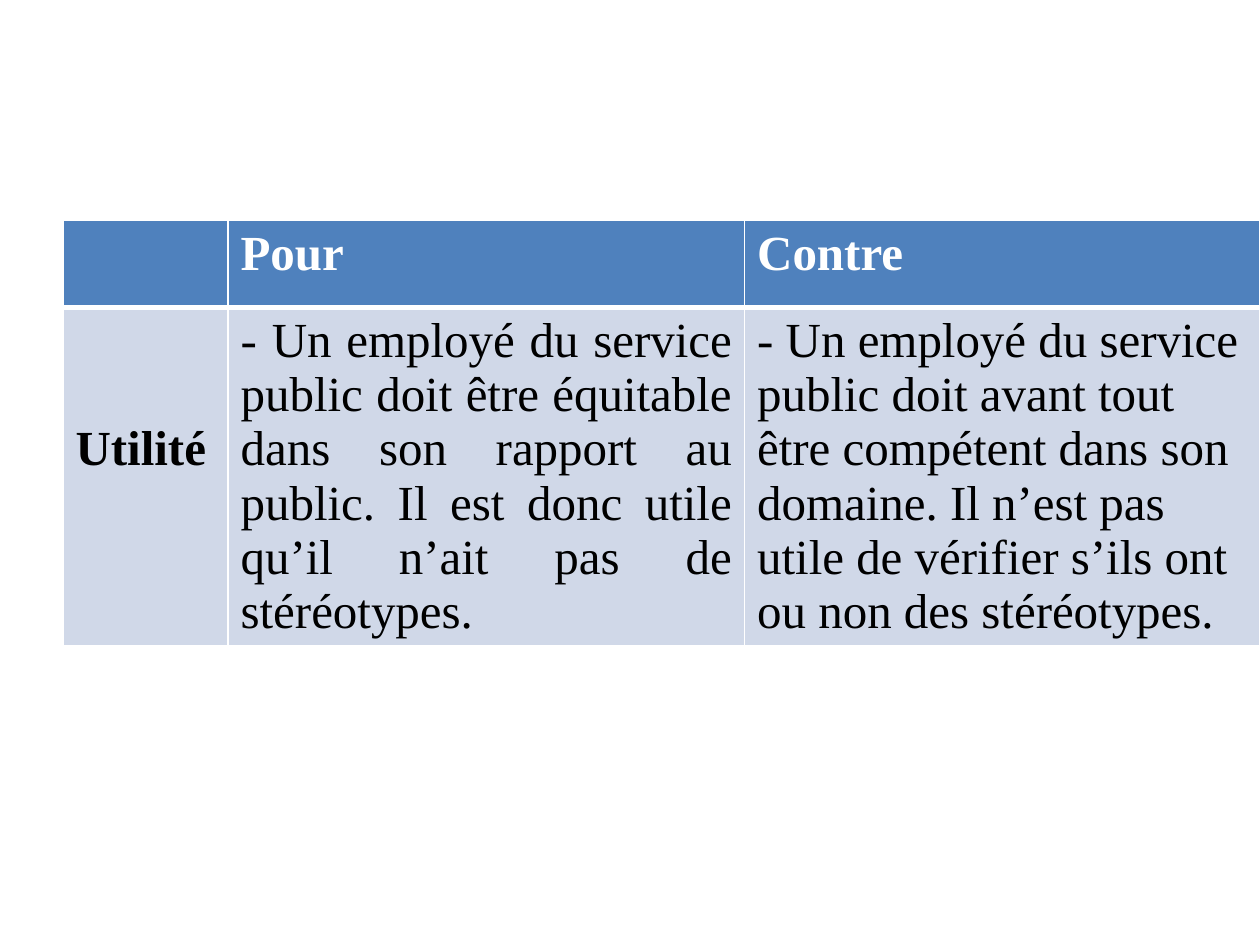
from lxml.etree import SubElement
from pptx import Presentation
from pptx.dml.color import RGBColor
from pptx.enum.text import PP_ALIGN
from pptx.oxml.ns import qn
from pptx.util import Inches, Pt

COLORS = {"header": "4F81BD", "body": "D0D8E8", "rule": "FFFFFF",
          "header_text": "FFFFFF", "body_text": "000000"}


def write_text(frame, text, color, size=28, bold=False, align=PP_ALIGN.LEFT,
               font="Times New Roman"):
    paragraph = frame.paragraphs[0]
    paragraph.alignment = align
    run = paragraph.add_run()
    run.text = text
    run.font.name = font
    run.font.size = Pt(size)
    run.font.bold = bold
    run.font.color.rgb = RGBColor.from_string(COLORS[color])


class ArgumentSlide:
    def __init__(self, presentation, rule=1, header_rule=3):
        self.slide = presentation.slides.add_slide(presentation.slide_layouts[6])
        self.rule = rule
        self.header_rule = header_rule

    def table(self, left, top, widths, heights):
        table = self.slide.shapes.add_table(
            len(heights), len(widths), Inches(left), Inches(top),
            Inches(sum(widths)), Inches(sum(heights))).table
        for column, width in zip(table.columns, widths):
            column.width = Inches(width)
        for row, height in zip(table.rows, heights):
            row.height = Inches(height)
        for index, row in enumerate(table.rows):
            for cell in row.cells:
                self.style_cell(cell, is_header=index == 0)
        return table

    def style_cell(self, cell, is_header):
        """Set the borders, with the thick rule under the header, and the fill."""
        thick_side = "lnB" if is_header else "lnT"
        properties = cell._tc.get_or_add_tcPr()
        for side in ("lnL", "lnR", "lnT", "lnB"):
            width = self.header_rule if side == thick_side else self.rule
            line = SubElement(properties, qn(f"a:{side}"), w=str(Pt(width)))
            line_fill = SubElement(line, qn("a:solidFill"))
            SubElement(line_fill, qn("a:srgbClr"), val=COLORS["rule"])
        cell.fill.solid()
        cell.fill.fore_color.rgb = RGBColor.from_string(
            COLORS["header" if is_header else "body"])


def main():
    presentation = Presentation()
    presentation.slide_width = Inches(10)
    presentation.slide_height = Inches(7.5)

    arguments = ArgumentSlide(presentation).table(
        0.5, 1.75, widths=(1.31, 4.1, 4.09), heights=(0.69, 2.67))

    for column, heading in enumerate(("Pour", "Contre"), start=1):
        write_text(arguments.cell(0, column).text_frame, heading,
                   "header_text", bold=True)

    criterion = arguments.cell(1, 0)
    criterion.margin_top = Inches(0.91)
    write_text(criterion.text_frame, "Utilité", "body_text", bold=True)

    write_text(arguments.cell(1, 1).text_frame,
               "- Un employé du service public doit être équitable dans son "
               "rapport au public. Il est donc utile qu’il n’ait pas de "
               "stéréotypes.", "body_text", align=PP_ALIGN.JUSTIFY)
    write_text(arguments.cell(1, 2).text_frame,
               "- Un employé du service public doit avant tout être compétent "
               "dans son domaine. Il n’est pas utile de vérifier s’ils ont ou "
               "non des stéréotypes.", "body_text")

    presentation.save("out.pptx")


if __name__ == "__main__":
    main()
